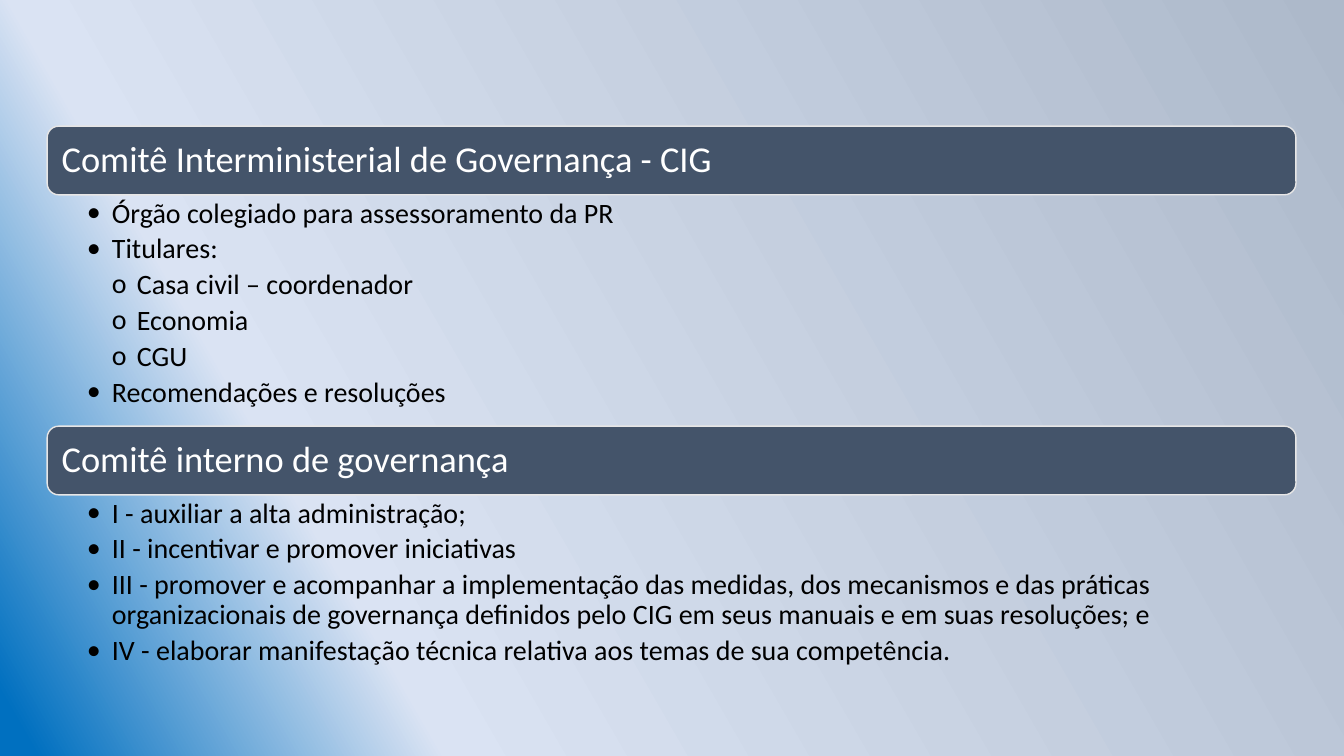
from copy import deepcopy

from lxml import etree
from pptx import Presentation
from pptx.dml.color import RGBColor
from pptx.enum import shapes, text
from pptx.oxml.ns import qn
from pptx.util import Cm, Pt


def hue(code):
    return RGBColor.from_string(code)


def write(para, words, size, code, after):
    """Format a paragraph and add its single run."""
    para.alignment = text.PP_ALIGN.LEFT
    para.line_spacing = 0.9
    para.space_before = Pt(0)
    para.space_after = Pt(after)
    run = para.add_run()
    run.text = words
    run.font.name = "Calibri"
    run.font.size = Pt(size)
    run.font.color.rgb = hue(code)


LEFT, WIDE, BAR = Cm(1.19), Cm(31.47), Cm(1.73)
STEP = Cm(0.63)

# Heading, top and list height in cm, then (level, words) of each item
groups = [
    ("Comitê Interministerial de Governança - CIG", 3.18, 5.84, [
        (1, "Órgão colegiado para assessoramento da PR"),
        (1, "Titulares:"),
        (2, "Casa civil – coordenador"),
        (2, "Economia"),
        (2, "CGU"),
        (1, "Recomendações e resoluções"),
    ]),
    ("Comitê interno de governança", 10.74, 4.62, [
        (1, "I - auxiliar a alta administração;"),
        (1, "II - incentivar e promover iniciativas"),
        (1, "III - promover e acompanhar a implementação das medidas, "
            "dos mecanismos e das práticas organizacionais de governança "
            "definidos pelo CIG em seus manuais e em suas resoluções; e"),
        (1, "IV - elaborar manifestação técnica relativa aos temas de sua "
            "competência."),
    ]),
]

deck = Presentation()
deck.slide_width, deck.slide_height = Cm(33.87), Cm(19.05)
slide = deck.slides.add_slide(deck.slide_layouts.get_by_name("Two Content"))
title = slide.shapes.title.element
title.getparent().remove(title)

# Background: the gradient starts with two stops, so a third is added
fill = slide.background.fill
fill.gradient()
fill.gradient_angle = 210
stops = slide.background.element.find(".//" + qn("a:gsLst"))
stops.append(deepcopy(stops[-1]))
shades = [("ADB9CA", 0), ("DAE3F3", 0.75), ("0070C0", 0.98)]
for stop, (code, place) in zip(fill.gradient_stops, shades):
    stop.color.rgb = hue(code)
    stop.position = place

bodies = list(slide.placeholders)
for (head, top, high, items), body in zip(groups, bodies):
    bar = slide.shapes.add_shape(
        shapes.MSO_SHAPE.ROUNDED_RECTANGLE, LEFT, Cm(top), WIDE, BAR)
    bar.shadow.inherit = False
    bar.fill.solid()
    bar.fill.fore_color.rgb = hue("44546A")
    bar.line.color.rgb = hue("E7E6E6")
    bar.line.width = Pt(1)
    frame = bar.text_frame
    frame.vertical_anchor = text.MSO_ANCHOR.MIDDLE
    frame.margin_left = frame.margin_right = Cm(0.28)
    write(frame.paragraphs[0], head, 26, "FFFFFF", 0)

    body.left, body.top = LEFT, Cm(top) + BAR
    body.width, body.height = WIDE, Cm(high)
    frame = body.text_frame
    frame.auto_size = text.MSO_AUTO_SIZE.NONE
    frame.vertical_anchor = text.MSO_ANCHOR.TOP
    frame.margin_left, frame.margin_right = Cm(1), Cm(0.5)
    frame.margin_top = frame.margin_bottom = Cm(0.1)
    for spot, (level, words) in enumerate(items):
        para = frame.paragraphs[0] if spot == 0 else frame.add_paragraph()
        para.level = level
        props = para._p.get_or_add_pPr()
        props.set("marL", str(STEP * level))
        props.set("indent", str(-STEP))
        face = etree.SubElement(props, qn("a:buFont"))
        face.set("typeface", "Calibri")
        mark = etree.SubElement(props, qn("a:buChar"))
        mark.set("char", "•" if level == 1 else "o")
        write(para, words, 20, "000000", 4)

deck.save("out.pptx")
